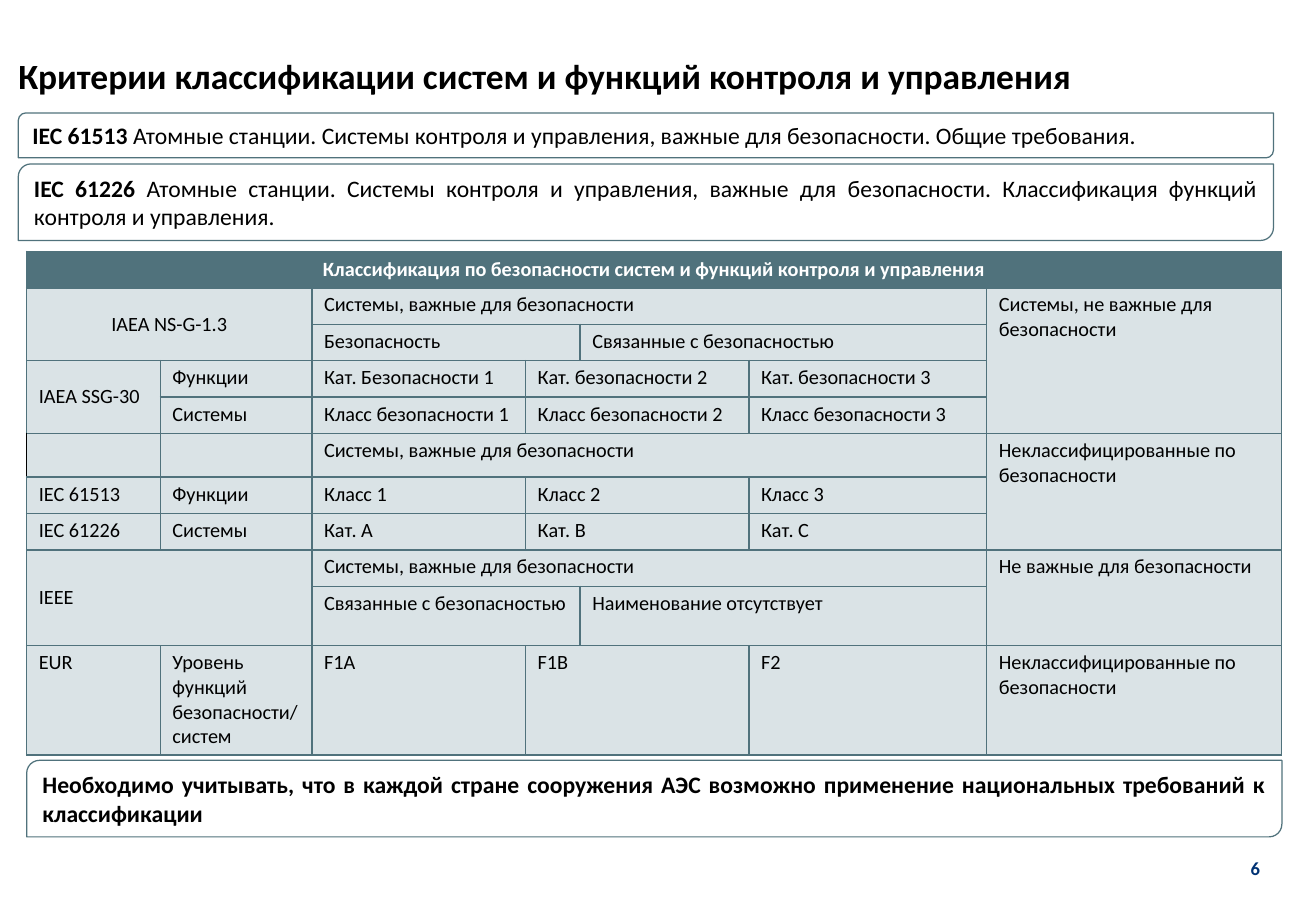
from lxml import etree
from pptx import Presentation
from pptx.dml.color import RGBColor
from pptx.enum.shapes import MSO_SHAPE
from pptx.enum.text import MSO_ANCHOR, MSO_AUTO_SIZE, PP_ALIGN
from pptx.oxml.ns import qn
from pptx.util import Inches, Pt

ROUNDED = MSO_SHAPE.ROUND_2_DIAG_RECTANGLE
MIDDLE, TOP = MSO_ANCHOR.MIDDLE, MSO_ANCHOR.TOP
LEFT, CENTER, JUSTIFY = PP_ALIGN.LEFT, PP_ALIGN.CENTER, PP_ALIGN.JUSTIFY
NO_AUTOFIT = MSO_AUTO_SIZE.NONE

FONT = "Calibri"
COLORS = {"teal": "50727C", "pale": "DAE3E6", "text": "000000",
          "white": "FFFFFF", "number": "003274"}
WIDTH, HEIGHT = Inches(10.83), Inches(7.5)

# Boxes are left, top, width, height in percent of the slide.
TITLE_BOX = (1.39, 6.4, 89.1, 4.4)
NOTES = [
    ((1.39, 12.4, 95.38, 4.93), "IEC 61513 ",
     "Атомные станции. Системы контроля и управления, важные для безопасности. Общие требования."),
    ((1.39, 18, 95.38, 8.4), "IEC 61226 ",
     "Атомные станции. Системы контроля и управления, важные для безопасности. "
     "Классификация функций контроля и управления."),
    ((2.03, 83.47, 95.38, 8.4),
     "Необходимо учитывать, что в каждой стране сооружения АЭС возможно применение "
     "национальных требований к классификации", ""),
]
TABLE_BOX = (2.03, 27.6, 95.38, 55.33)
NUMBER_BOX = (93.35, 91.47, 4.06, 7.73)

COLUMN_WEIGHTS = [1.1, 1.25, 1.76, 0.45, 1.39, 1.96, 2.43]
ROW_WEIGHTS = [0.3, 0.3, 0.3, 0.3, 0.3, 0.36, 0.3, 0.3, 0.3, 0.49, 0.9]
IMPORTANT = "Системы, важные для безопасности"
UNCLASSIFIED = "Неклассифицированные по безопасности"
# Each row lists (column, row span, column span, text).
ROWS = [
    [(0, 1, 7, "Классификация по безопасности систем и функций контроля и управления")],
    [(0, 2, 2, "IAEA NS-G-1.3"), (2, 1, 4, IMPORTANT),
     (6, 4, 1, "Системы, не важные для безопасности")],
    [(2, 1, 2, "Безопасность"), (4, 1, 2, "Связанные с безопасностью")],
    [(0, 2, 1, "IAEA SSG-30"), (1, 1, 1, "Функции"), (2, 1, 1, "Кат. Безопасности 1"),
     (3, 1, 2, "Кат. безопасности 2"), (5, 1, 1, "Кат. безопасности 3")],
    [(1, 1, 1, "Системы"), (2, 1, 1, "Класс безопасности 1"),
     (3, 1, 2, "Класс безопасности 2"), (5, 1, 1, "Класс безопасности 3")],
    [(0, 1, 1, ""), (1, 1, 1, ""), (2, 1, 4, IMPORTANT), (6, 3, 1, UNCLASSIFIED)],
    [(0, 1, 1, "IEC 61513"), (1, 1, 1, "Функции"), (2, 1, 1, "Класс 1"),
     (3, 1, 2, "Класс 2"), (5, 1, 1, "Класс 3")],
    [(0, 1, 1, "IEC 61226"), (1, 1, 1, "Системы"), (2, 1, 1, "Кат. А"),
     (3, 1, 2, "Кат. В"), (5, 1, 1, "Кат. С")],
    [(0, 2, 2, "IEEE"), (2, 1, 4, IMPORTANT), (6, 2, 1, "Не важные для безопасности")],
    [(2, 1, 2, "Связанные с безопасностью"), (4, 1, 2, "Наименование отсутствует")],
    [(0, 1, 1, "EUR"), (1, 1, 1, "Уровень функций безопасности/ систем"),
     (2, 1, 1, "F1A"), (3, 1, 2, "F1B"), (5, 1, 1, "F2"), (6, 1, 1, UNCLASSIFIED)],
]
BLACK_EDGE_ROW = 5
CENTERED = {(0, 0), (1, 0)}
MIDDLE_CELLS = CENTERED | {(3, 0), (8, 0)}


def color(name):
    return RGBColor.from_string(COLORS[name])


def place(box):
    """Turn a box in percent into slide lengths."""
    return [round(share * side / 100) for share, side in zip(box, (WIDTH, HEIGHT) * 2)]


def format_run(run, size, color_name="text", bold=False):
    run.font.name = FONT
    run.font.size = Pt(size)
    run.font.bold = bold
    run.font.color.rgb = color(color_name)


def add_title(slide, box):
    title = slide.shapes.title
    title.left, title.top, title.width, title.height = place(box)
    frame = title.text_frame
    frame.text = "Критерии классификации систем и функций контроля и управления"
    frame.auto_size = NO_AUTOFIT
    frame.vertical_anchor = MIDDLE
    frame.margin_left = frame.margin_right = frame.margin_top = frame.margin_bottom = 0
    paragraph = frame.paragraphs[0]
    paragraph.alignment = LEFT
    paragraph.line_spacing = 0.9
    format_run(paragraph.runs[0], 21, bold=True)


def add_note(slide, box, bold_text, plain_text):
    note = slide.shapes.add_shape(ROUNDED, *place(box))
    note.shadow.inherit = False
    note.fill.background()
    note.line.color.rgb = color("teal")
    note.line.width = Pt(0.75)
    note.text_frame.word_wrap = True
    paragraph = note.text_frame.paragraphs[0]
    paragraph.alignment = JUSTIFY
    for text, bold in ((bold_text, True), (plain_text, False)):
        if text:
            run = paragraph.add_run()
            run.text = text
            format_run(run, 14, bold=bold)


def set_borders(cell, left_color):
    properties = cell._tc.get_or_add_tcPr()
    for side in "LRTB":
        line = etree.SubElement(properties, qn(f"a:ln{side}"), w=str(Pt(1)))
        fill = etree.SubElement(line, qn("a:solidFill"))
        name = left_color if side == "L" else "teal"
        etree.SubElement(fill, qn("a:srgbClr"), val=COLORS[name])


def fill_cell(cell, row, column, text):
    cell.margin_top = cell.margin_bottom = Inches(0.04 if text else 0)
    cell.vertical_anchor = MIDDLE if (row, column) in MIDDLE_CELLS else TOP
    if text:
        cell.text = text
        paragraph = cell.text_frame.paragraphs[0]
        paragraph.alignment = CENTER if (row, column) in CENTERED else LEFT
        header = row == 0
        format_run(paragraph.runs[0], 12, "white" if header else "text", header)


def add_classification_table(slide, box):
    left, top, width, height = place(box)
    table = slide.shapes.add_table(len(ROW_WEIGHTS), len(COLUMN_WEIGHTS),
                                   left, top, width, height).table
    table.horz_banding = False
    for column, weight in zip(table.columns, COLUMN_WEIGHTS):
        column.width = round(width * weight / sum(COLUMN_WEIGHTS))
    for row, weight in zip(table.rows, ROW_WEIGHTS):
        row.height = round(height * weight / sum(ROW_WEIGHTS))
    for row in range(len(ROW_WEIGHTS)):
        for column in range(len(COLUMN_WEIGHTS)):
            cell = table.cell(row, column)
            black_edge = (row, column) == (BLACK_EDGE_ROW, 0)
            set_borders(cell, "text" if black_edge else "teal")
            cell.fill.solid()
            cell.fill.fore_color.rgb = color("pale" if row else "teal")
            cell.margin_top = cell.margin_bottom = 0
    for row, entries in enumerate(ROWS):
        for column, row_span, column_span, text in entries:
            cell = table.cell(row, column)
            if row_span * column_span > 1:
                cell.merge(table.cell(row + row_span - 1, column + column_span - 1))
            fill_cell(cell, row, column, text)


def add_slide_number(slide, box):
    frame = slide.shapes.add_textbox(*place(box)).text_frame
    frame.text = "6"
    frame.word_wrap = False
    frame.vertical_anchor = MIDDLE
    frame.paragraphs[0].alignment = CENTER
    format_run(frame.paragraphs[0].runs[0], 11, "number", True)


def main():
    presentation = Presentation()
    presentation.slide_width, presentation.slide_height = WIDTH, HEIGHT
    slide = presentation.slides.add_slide(presentation.slide_layouts[5])
    add_title(slide, TITLE_BOX)
    for box, bold_text, plain_text in NOTES:
        add_note(slide, box, bold_text, plain_text)
    add_classification_table(slide, TABLE_BOX)
    add_slide_number(slide, NUMBER_BOX)
    presentation.save("out.pptx")


if __name__ == "__main__":
    main()
